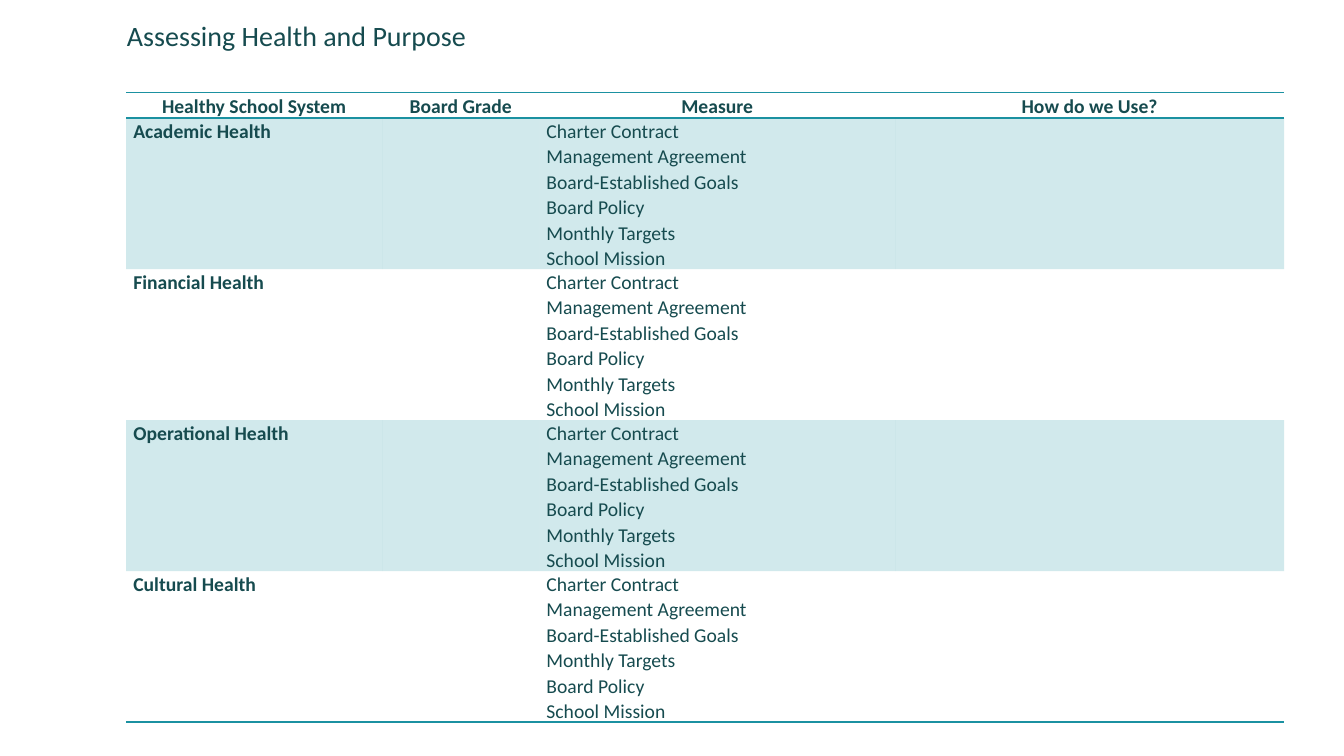
"""Build the school health assessment slide."""
from lxml.etree import SubElement
from pptx import Presentation
from pptx.dml.color import RGBColor
from pptx.enum.text import MSO_AUTO_SIZE, PP_ALIGN
from pptx.oxml.ns import qn
from pptx.util import Cm, Pt

COLORS = {"text": "164B4F", "accent": "1B91A1", "page": "FFFFFF"}
HEADINGS = ["Healthy School System", "Board Grade", "Measure", "How do we Use?"]
MEASURES = ["Charter Contract", "Management Agreement", "Board-Established Goals",
            "Board Policy", "Monthly Targets", "School Mission"]
CULTURAL_MEASURES = [MEASURES[place] for place in (0, 1, 2, 4, 3, 5)]
HEALTH_AREAS = [("Academic Health", MEASURES), ("Financial Health", MEASURES),
                ("Operational Health", MEASURES), ("Cultural Health", CULTURAL_MEASURES)]
COLUMN_WIDTHS = [6.45, 3.96, 8.97, 9.8]
HEADER_HEIGHT, AREA_HEIGHT = 0.58, 3.66


def write_text(frame, text, size=14, bold=False, align=PP_ALIGN.LEFT, spacing=1.07):
    for index, line in enumerate(text.split("\n")):
        para = frame.paragraphs[0] if index == 0 else frame.add_paragraph()
        para.alignment = align
        para.line_spacing = spacing
        para.font.size = Pt(size)
        if line:
            span = para.add_run()
            span.text = line
            span.font.name = "Calibri"
            span.font.size = Pt(size)
            span.font.bold = bold
            span.font.color.rgb = RGBColor.from_string(COLORS["text"])


class SlideBuilder:
    def __init__(self, deck):
        self.page = deck.slides.add_slide(deck.slide_layouts[6])
        self.page.background.fill.solid()
        self.page.background.fill.fore_color.rgb = RGBColor.from_string(COLORS["page"])

    def title(self, text, left, top, width, height):
        box = self.page.shapes.add_textbox(Cm(left), Cm(top), Cm(width), Cm(height))
        box.text_frame.word_wrap = True
        box.text_frame.auto_size = MSO_AUTO_SIZE.SHAPE_TO_FIT_TEXT
        write_text(box.text_frame, text, size=20, spacing=0.9)

    def border(self, cell, side, visible):
        line = SubElement(cell._tc.get_or_add_tcPr(), qn(f"a:ln{side}"), w=str(Pt(1)))
        if visible:
            fill = SubElement(line, qn("a:solidFill"))
            SubElement(fill, qn("a:srgbClr"), val=COLORS["accent"])
        else:
            SubElement(line, qn("a:noFill"))

    def shade(self, cell, shaded):
        if not shaded:
            cell.fill.background()
            return
        cell.fill.solid()
        cell.fill.fore_color.rgb = RGBColor.from_string(COLORS["accent"])
        color = cell._tc.tcPr.find(f".//{qn('a:solidFill')}[last()]/{qn('a:srgbClr')}")
        fill = cell._tc.tcPr.find(qn("a:solidFill"))
        color = fill.find(qn("a:srgbClr")) if fill is not None else color
        SubElement(color, qn("a:alpha"), val="20000")

    def table(self, rows, left, top, widths, heights):
        frame = self.page.shapes.add_table(len(rows), len(widths), Cm(left), Cm(top),
                                           Cm(sum(widths)), Cm(sum(heights)))
        table = frame.table
        table.first_row = table.horz_banding = False
        for column, width in zip(table.columns, widths):
            column.width = Cm(width)
        for row, height in zip(table.rows, heights):
            row.height = Cm(height)
        for row_index, texts in enumerate(rows):
            header = row_index == 0
            for column_index, text in enumerate(texts):
                cell = table.cell(row_index, column_index)
                cell.margin_left = cell.margin_right = Cm(0.18)
                cell.margin_top = cell.margin_bottom = 0
                write_text(cell.text_frame, text, bold=header or column_index == 0,
                           align=PP_ALIGN.CENTER if header else PP_ALIGN.LEFT)
                edges = {"L": False, "R": False, "T": row_index <= 1,
                         "B": header or row_index == len(rows) - 1}
                for side, visible in edges.items():
                    self.border(cell, side, visible)
                self.shade(cell, row_index % 2 == 1)


def main():
    deck = Presentation()
    deck.slide_width, deck.slide_height = Cm(33.87), Cm(19.05)
    builder = SlideBuilder(deck)
    builder.title("Assessing Health and Purpose", 2.95, 0.43, 30.05, 1.02)
    rows = [HEADINGS] + [[area, "", "\n".join(measures), ""]
                         for area, measures in HEALTH_AREAS]
    heights = [HEADER_HEIGHT] + [AREA_HEIGHT] * len(HEALTH_AREAS)
    builder.table(rows, 3.18, 2.34, COLUMN_WIDTHS, heights)
    deck.save("out.pptx")


if __name__ == "__main__":
    main()
